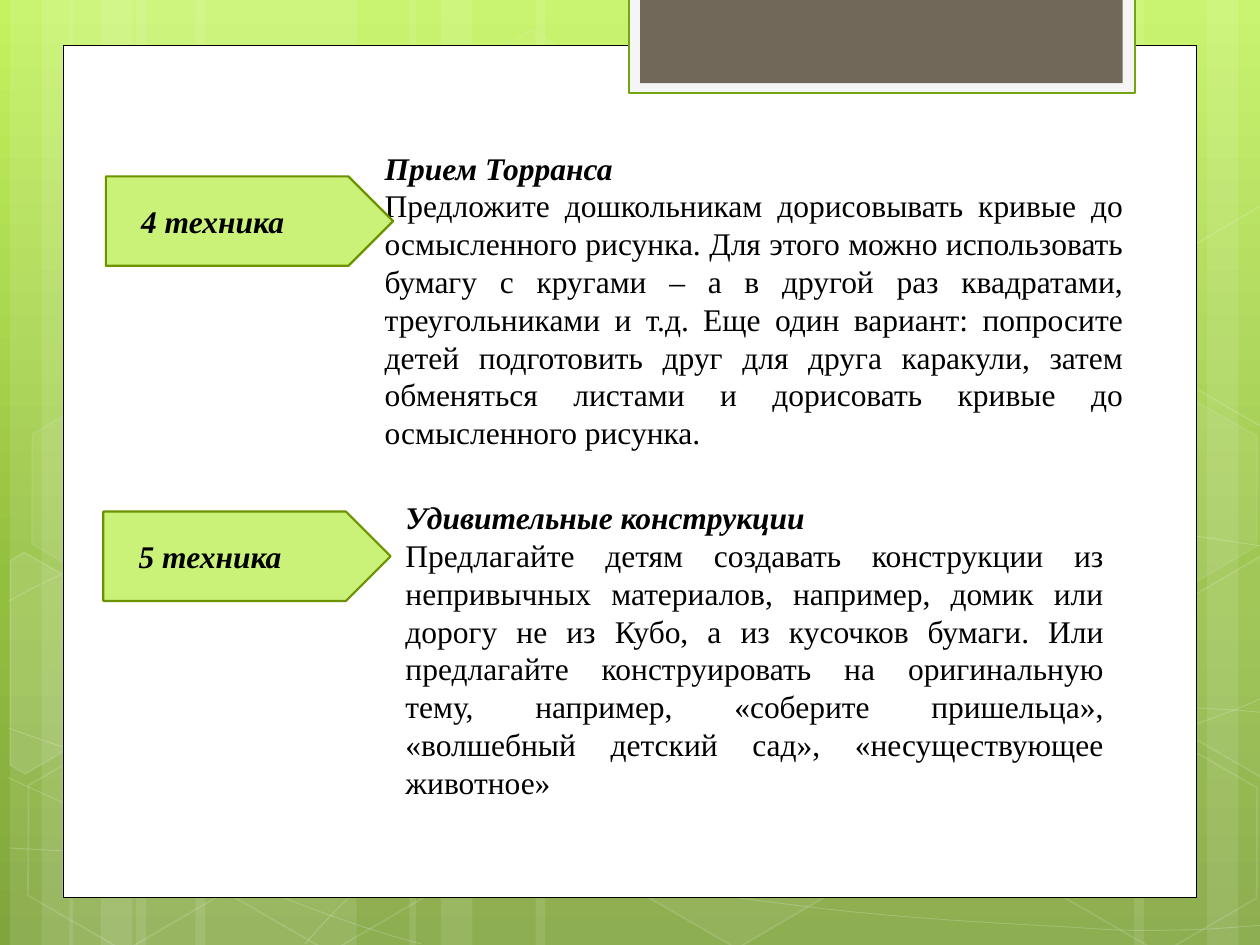
from copy import deepcopy
from dataclasses import dataclass
from math import cos, radians, sin
from typing import Optional

from lxml.etree import SubElement
from pptx import Presentation
from pptx.dml.color import RGBColor
from pptx.enum.shapes import MSO_SHAPE as Shape
from pptx.enum.text import MSO_ANCHOR as Anchor, MSO_AUTO_SIZE as AutoSize, PP_ALIGN as Align
from pptx.oxml.ns import qn
from pptx.util import Inches, Pt

COLS, ROWS = 100, 75
CELL = Inches(10) // COLS
TILT = 30
COLORS = {
    "sky": "C3F35F", "leaf": "93BF3F", "moss": "81A53E",
    "white": "FFFFFF", "black": "000000", "frame": "F5F5F5",
    "frame_edge": "74A510", "taupe": "71685A",
    "plate": "CAF278", "plate_edge": "6D9200",
}


@dataclass
class Box:
    left: float
    top: float
    width: float
    height: float


@dataclass
class Style:
    fill: Optional[str] = None
    line: Optional[str] = None
    weight: float = 1
    fill_alpha: int = 100
    line_alpha: int = 100


@dataclass
class Hexagon:
    left: float
    top: float
    fill_alpha: int
    line_alpha: int


@dataclass
class CutHexagon:
    center: tuple
    points: list
    fill_alpha: int = 0


@dataclass
class Technique:
    label: str
    plate: Box
    title: str
    body: str
    text: Box


BANDS = [(10.8, 17.5), (0.8, 5), (3.3, 8.3), (15.5, 17.5), (5.5, 5), (8, 8.3),
         (73.3, 17.5), (95.8, 5), (90, 8.3), (42.5, 30.8), (32.5, 5), (35, 8.3)]

CURVES = [
    [(0.7, 67.3), (6.1, 67.6), (11.5, 67.9), (19, 67.8), (26.5, 67.7), (35.8, 67.5),
     (45.8, 66.5), (55.8, 65.5), (70, 63.6), (79.2, 61.7), (88.3, 59.8), (97.7, 56.8),
     (100.7, 55.1)],
    [(0.7, 47.7), (3.6, 46.1), (6.5, 44.6), (12.1, 43.1), (17.8, 41.6), (25.9, 39.4),
     (34.7, 38.7), (43.6, 38), (54.4, 37.9), (65.4, 38.7), (76.4, 39.5), (94.7, 42.6),
     (100.7, 43.4)],
    [(0.6, 61.7), (12.7, 67.2), (24.7, 72.7), (33.4, 74.9)],
    [(0.7, 57.8), (3.8, 58.9), (7, 60), (12.8, 61.6), (18.6, 63.1), (27.3, 65.6),
     (35.7, 67.3), (44, 69), (54.5, 70.8), (62.8, 71.8), (71.1, 72.9), (80, 73.3),
     (85.3, 73.6), (90.5, 74), (91.9, 73.8), (94.5, 73.8), (97.1, 73.7), (98.9, 73.5),
     (100.7, 73.4)],
    [(24.2, 74.9), (26, 72.9), (27.8, 70.9), (30.2, 69.1), (32.6, 67.3), (36, 65.3),
     (38.8, 63.9), (41.6, 62.5), (43.3, 61.9), (47, 60.9), (50.6, 59.9), (57.3, 58.5),
     (60.8, 57.8), (64.4, 57.1), (64.9, 57.1), (68, 56.9), (71.1, 56.6), (76, 56.3),
     (79.4, 56.2), (82.9, 56.1), (88.6, 56.2), (88.6, 56.2), (90.8, 56.2), (93, 56.2),
     (95.3, 56.2), (97.1, 56.3), (98.8, 56.4), (99.7, 56.5), (100.6, 56.6),
     (100.3, 56.5), (100.6, 56.6)],
]

HEXAGONS = [Hexagon(33.4, 3.6, 4, 8), Hexagon(49.7, 58.9, 6, 12), Hexagon(1.1, 59.1, 0, 12),
            Hexagon(1.4, 31.2, 7, 8), Hexagon(17.4, 59.2, 0, 12), Hexagon(75.3, 45.3, 10, 12),
            Hexagon(83.4, 59.3, 0, 12), Hexagon(83.4, 31.4, 7, 8)]

CUT_HEXAGONS = [
    CutHexagon((3.6, 53.5), [(0.8, 44.5), (1.9, 43.8), (9.6, 48.2), (9.5, 57), (2, 61.4),
                             (0.8, 60.7)], 10),
    CutHexagon((98.5, 52), [(92.6, 48.5), (100.1, 44.1), (100.9, 44.6), (100.9, 61.3),
                            (100.2, 61.7), (92.6, 57.3)], 4),
    CutHexagon((98.5, 24.1), [(92.6, 20.7), (100.1, 16.3), (101, 16.8), (100.9, 33.5),
                              (100.2, 33.9), (92.6, 29.5)]),
]

PANELS = [
    (Box(5, 3.6, 90, 67.6), Style("white", "black", 0.5)),
    (Box(49.9, -0.2, 40.2, 7.6), Style("frame", "frame_edge", 1.25)),
    (Box(50.8, -0.2, 38.3, 6.8), Style("taupe")),
]

TECHNIQUES = [
    Technique("4 техника", Box(8.4, 14, 22.8, 7.1), "Прием Торранса",
              "Предложите дошкольникам дорисовывать кривые до осмысленного рисунка. "
              "Для этого можно использовать бумагу с кругами – а в другой раз квадратами, "
              "треугольниками и т.д. Еще один вариант: попросите детей подготовить друг для "
              "друга каракули, затем обменяться листами и дорисовать кривые до "
              "осмысленного рисунка.", Box(29.55, 11.3, 60.6, 25.2)),
    Technique("5 техника", Box(8.2, 40.6, 22.8, 7.1), "Удивительные конструкции",
              "Предлагайте детям создавать конструкции из непривычных материалов, например, "
              "домик или дорогу не из Кубо, а из кусочков бумаги. Или предлагайте "
              "конструировать на оригинальную тему, например, «соберите пришельца», "
              "«волшебный детский сад», «несуществующее животное»",
              Box(31.2, 39.05, 57.4, 25.2)),
]


def rgb(name: str) -> RGBColor:
    return RGBColor.from_string(COLORS[name])


def place(box: Box) -> list:
    return [round(v * CELL) for v in (box.left, box.top, box.width, box.height)]


def paint(fill, color: Optional[str], alpha: int, parent) -> None:
    if not color or not alpha:
        fill.background()
        return
    fill.solid()
    fill.fore_color.rgb = rgb(color)
    if alpha < 100:
        clr = parent.find(f"{qn('a:solidFill')}/{qn('a:srgbClr')}")
        SubElement(clr, qn("a:alpha"), val=str(alpha * 1000))


def apply_style(sp, style: Style) -> None:
    sp.shadow.inherit = False
    props = sp.element.spPr
    paint(sp.fill, style.fill, style.fill_alpha, props)
    sp.line.width = Pt(style.weight)
    paint(sp.line.fill, style.line, style.line_alpha, props.find(qn("a:ln")))


def add_shape(s, kind: Shape, box: Box, style: Style):
    sp = s.shapes.add_shape(kind, *place(box))
    apply_style(sp, style)
    return sp


def add_outline(s, points: list, closed: bool, style: Style):
    emu = [(round(x * CELL), round(y * CELL)) for x, y in points]
    builder = s.shapes.build_freeform(*emu[0])
    builder.add_line_segments(emu[1:], close=closed)
    sp = builder.convert_to_shape()
    apply_style(sp, style)
    return sp


def add_curve(s, points: list) -> None:
    sp = add_outline(s, points, False, Style(None, "white", 0.5, line_alpha=20))
    outline = sp.element.spPr.find(f".//{qn('a:path')}")
    segments = outline.findall(qn("a:lnTo"))
    for i in range(0, len(segments), 3):
        bezier = SubElement(outline, qn("a:cubicBezTo"))
        for segment in segments[i:i + 3]:
            bezier.append(segment[0])
            outline.remove(segment)


def add_cut_hexagon(s, cut: CutHexagon) -> None:
    cx, cy = cut.center
    c, d = cos(radians(TILT)), sin(radians(TILT))
    upright = [(cx + (x - cx) * c + (y - cy) * d, cy - (x - cx) * d + (y - cy) * c)
               for x, y in cut.points]
    sp = add_outline(s, upright, True, Style("white", "white", 1, cut.fill_alpha, 12))
    sp.rotation = TILT


def add_run(p, text: str, strong: bool) -> None:
    r = p.add_run()
    r.text = text
    r.font.name, r.font.size = "Times New Roman", Pt(18)
    r.font.bold = r.font.italic = strong
    r.font.color.rgb = rgb("black")


def add_technique(s, item: Technique) -> None:
    tf = s.shapes.add_textbox(*place(item.text)).text_frame
    tf.word_wrap = True
    tf.auto_size = AutoSize.SHAPE_TO_FIT_TEXT
    add_run(tf.paragraphs[0], item.title, True)
    p = tf.add_paragraph()
    p.alignment = Align.JUSTIFY
    add_run(p, item.body, False)

    sp = add_shape(s, Shape.PENTAGON, item.plate, Style("plate", "plate_edge", 1.25))
    tf = sp.text_frame
    tf.vertical_anchor = Anchor.MIDDLE
    tf.margin_left = Inches(0.28)
    tf.paragraphs[0].alignment = Align.LEFT
    add_run(tf.paragraphs[0], item.label, True)


def add_background(s) -> None:
    fill = s.background.fill
    fill.gradient()
    fill.gradient_angle = 270
    stops = s.element.find(f".//{qn('a:gsLst')}")
    stops.append(deepcopy(stops[-1]))
    for stop, (color, share) in zip(fill.gradient_stops,
                                    [("sky", 0), ("leaf", 0.62), ("moss", 1)]):
        stop.color.rgb = rgb(color)
        stop.position = share


def main() -> None:
    prs = Presentation()
    prs.slide_width, prs.slide_height = COLS * CELL, ROWS * CELL
    s = prs.slides.add_slide(prs.slide_layouts[6])
    add_background(s)
    for left, width in BANDS:
        add_shape(s, Shape.RECTANGLE, Box(left, 0, width, ROWS), Style("white", fill_alpha=10))
    for curve in CURVES:
        add_curve(s, curve)
    for h in HEXAGONS:
        sp = add_shape(s, Shape.HEXAGON, Box(h.left, h.top, 17.5, 15.2),
                       Style("white", "white", 1, h.fill_alpha, h.line_alpha))
        sp.adjustments[0] = 0.285
        sp.rotation = TILT
    for cut in CUT_HEXAGONS:
        add_cut_hexagon(s, cut)
    for box, style in PANELS:
        add_shape(s, Shape.RECTANGLE, box, style)
    for item in TECHNIQUES:
        add_technique(s, item)
    prs.save("out.pptx")


if __name__ == "__main__":
    main()
